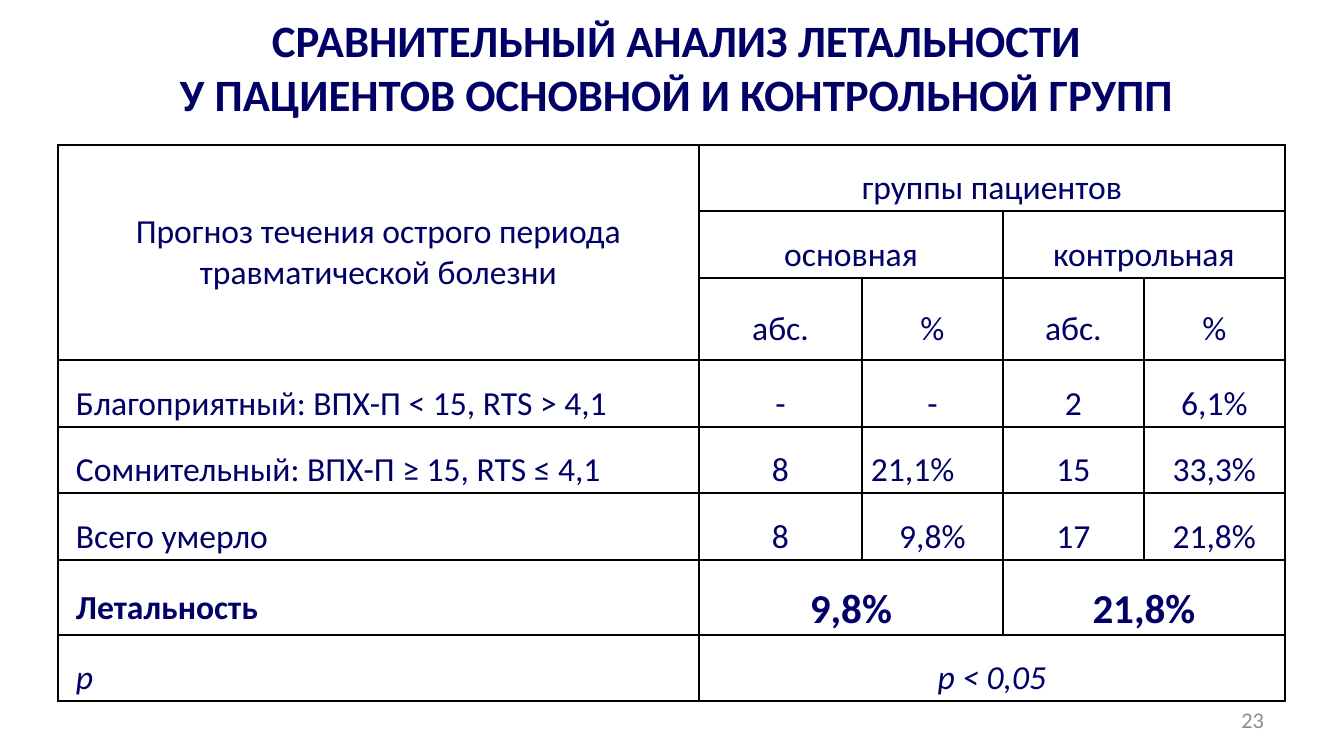
import pptx
import pptx.util
import pptx.dml.color
import pptx.enum.text
import pptx.oxml
import pptx.oxml.ns

# Content
title = "СРАВНИТЕЛЬНЫЙ АНАЛИЗ ЛЕТАЛЬНОСТИ\vУ ПАЦИЕНТОВ ОСНОВНОЙ И КОНТРОЛЬНОЙ ГРУПП"
number = "23"
rows = [
    ["Прогноз течения острого периода\nтравматической болезни", "группы пациентов", "", "", ""],
    ["", "основная", "", "контрольная", ""],
    ["", "абс.", "%", "абс.", "%"],
    ["Благоприятный: ВПХ-П < 15, RTS > 4,1", "-", "-", "2", "6,1%"],
    ["Сомнительный: ВПХ-П ≥ 15, RTS ≤ 4,1", "8", "21,1%", "15", "33,3%"],
    ["Всего умерло", "8", "9,8%", "17", "21,8%"],
    ["Летальность", "9,8%", "", "21,8%", ""],
    ["p", "p < 0,05", "", "", ""],
]
# Merged areas: first row, first column, last row, last column
spans = [(0, 0, 2, 0), (0, 1, 0, 4), (1, 1, 1, 2), (1, 3, 1, 4),
         (6, 1, 6, 2), (6, 3, 6, 4), (7, 1, 7, 4)]
widths = [641, 163, 141, 141, 141]
heights = [66, 67, 82, 67, 66, 67, 75, 66]
death, prob = 6, 7
colors = {"ink": "000066", "line": "000000", "paper": "FFFFFF", "page": "8C8C8C"}
font = "Calibri"
align = pptx.enum.text.PP_ALIGN
middle = pptx.enum.text.MSO_ANCHOR.MIDDLE


def px(n):
    return pptx.util.Emu(round(n * 914400 / 134.4))


def write(frame, text, size=18, color="ink", bold=False, slant=False,
          side=align.CENTER, space=1.0):
    frame.word_wrap = True
    frame.text = text
    for par in frame.paragraphs:
        par.alignment = side
        par.line_spacing = space
        for run in par.runs:
            run.font.name = font
            run.font.size = pptx.util.Pt(size)
            run.font.bold = bold
            run.font.italic = slant
            run.font.color.rgb = pptx.dml.color.RGBColor.from_string(colors[color])


def label(slide, box, text, inset=(13, 7), **style):
    frame = slide.shapes.add_textbox(*map(px, box)).text_frame
    frame.margin_left = frame.margin_right = px(inset[0])
    frame.margin_top = frame.margin_bottom = px(inset[1])
    frame.vertical_anchor = middle
    write(frame, text, **style)


def border(cell):
    props = cell._tc.get_or_add_tcPr()
    for spot, edge in enumerate(("lnL", "lnR", "lnT", "lnB")):
        props.insert(spot, pptx.oxml.parse_xml(
            f'<a:{edge} {pptx.oxml.ns.nsdecls("a")} w="12700"><a:solidFill>'
            f'<a:srgbClr val="{colors["line"]}"/></a:solidFill></a:{edge}>'))


deck = pptx.Presentation()
deck.slide_width, deck.slide_height = px(1344), px(756)
slide = deck.slides.add_slide(deck.slide_layouts[6])

# Title
label(slide, (47, 8, 1259, 117), title, inset=(5, 5), size=24, bold=True)

# Table grid
grid = slide.shapes.add_table(len(rows), len(widths), px(58), px(145),
                              px(sum(widths)), px(sum(heights))).table
grid.first_row = grid.horz_banding = False
for col, width in zip(grid.columns, widths):
    col.width = px(width)
for row, height in zip(grid.rows, heights):
    row.height = px(height)
for top, left, low, right in spans:
    grid.cell(top, left).merge(grid.cell(low, right))

# Table cells
for r, row in enumerate(rows):
    for c, text in enumerate(row):
        cell = grid.cell(r, c)
        name = c == 0 and r > 2
        cell.margin_left = px(18 if name else 9)
        cell.margin_right = px(9)
        cell.margin_top = cell.margin_bottom = 0
        cell.vertical_anchor = middle
        cell.fill.solid()
        cell.fill.fore_color.rgb = pptx.dml.color.RGBColor.from_string(colors["paper"])
        border(cell)
        if text:
            write(cell.text_frame, text,
                  size=22 if r == death and c else 18,
                  bold=r == death, slant=r == prob,
                  side=align.LEFT if name or (r, c) == (4, 2) else align.CENTER,
                  space=1.0 if (r, c) == (0, 0) else 1.5)

# Page number
label(slide, (964, 700, 313, 40), number, size=12, color="page", side=align.RIGHT)

deck.save("out.pptx")
